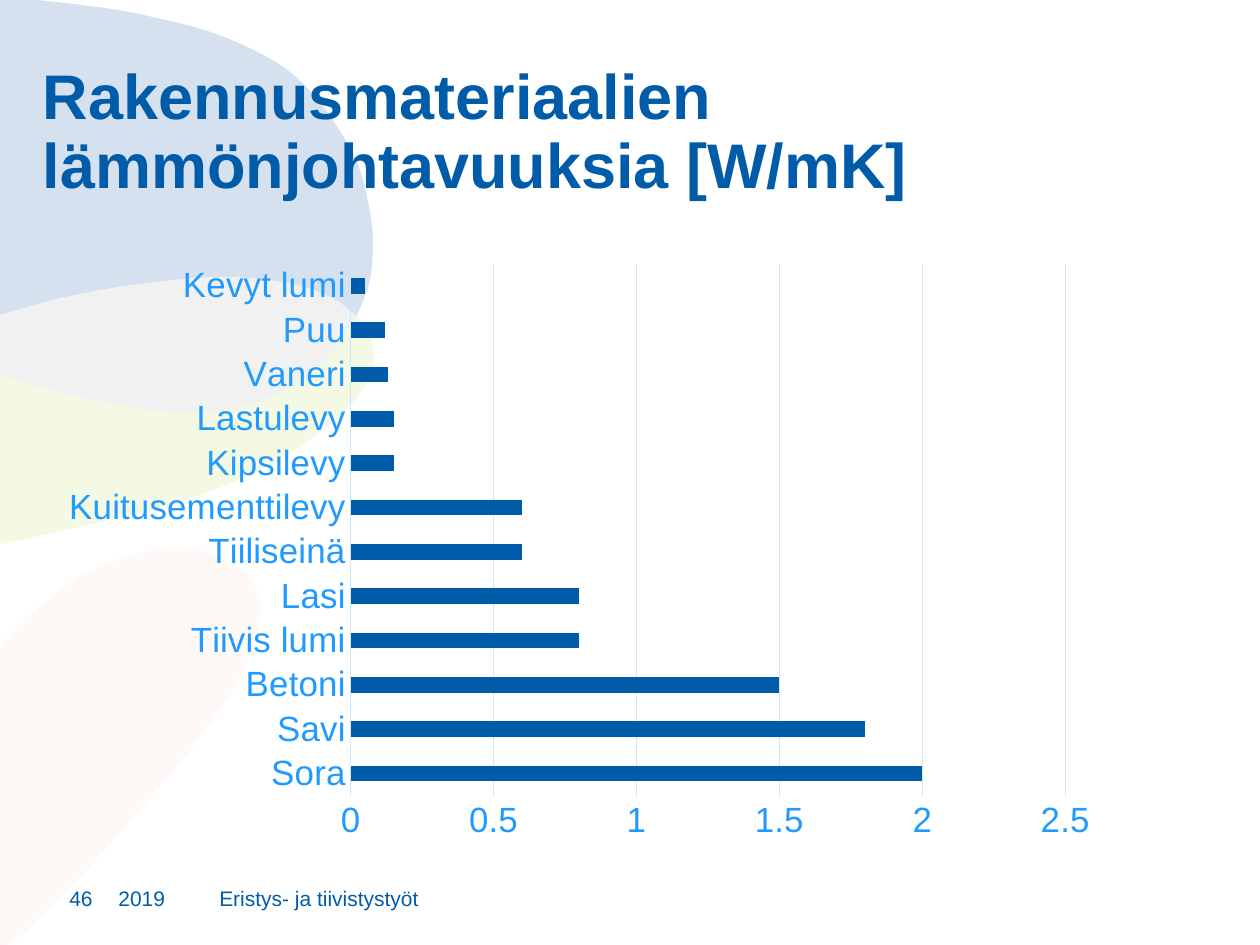
from lxml import etree
from pptx import Presentation
from pptx import util as u
from pptx.chart.data import CategoryChartData
from pptx.dml.color import RGBColor
from pptx.enum import chart as charts, text
from pptx.oxml import parse_xml
from pptx.oxml.ns import nsdecls

THEME = {
    "font": "Arial",
    "navy": RGBColor.from_string("005CA8"),
    "sky": RGBColor.from_string("219AFF"),
    "grid": RGBColor.from_string("CCE8FF"),
    "petal_blue": RGBColor.from_string("D6E1F0"),
    "petal_green": RGBColor.from_string("F3F9E3"),
    "petal_gray": RGBColor.from_string("F1F1F1"),
    "petal_rose": RGBColor.from_string("FEF9F7"),
    "title_size": u.Pt(36),
    "axis_size": u.Pt(20),
    "footer_size": u.Pt(12),
    "chart_size": u.Pt(10),
}


def format_font(font, color, **values):
    for key, value in {"name": THEME["font"], **values}.items():
        setattr(font, key, value)
    font.color.rgb = THEME[color]


def smooth_curve(points, steps=5):
    """Pass a Catmull-Rom curve through the points."""
    padded = [points[0], *points, points[-1]]
    curve = []
    for a, b, c, d in zip(padded, padded[1:], padded[2:], padded[3:]):
        for step in range(steps):
            t = step / steps
            curve.append(tuple(
                q + t * (r - p) / 2 + t**2 * (2 * p - 5 * q + 4 * r - s) / 2
                + t**3 * (3 * q - p - 3 * r + s) / 2
                for p, q, r, s in zip(a, b, c, d)))
    return curve + [points[-1]]


presentation = Presentation()
presentation.slide_width, presentation.slide_height = u.Inches(10), u.Inches(7.5)
slide = presentation.slides.add_slide(presentation.slide_layouts[5])

# Background petals: the gray one lies between the blue and the green
crest = smooth_curve([(0, 2.5), (0.47, 2.37), (0.94, 2.28), (1.41, 2.22), (1.78, 2.2),
                      (2.11, 2.22), (2.42, 2.28), (2.66, 2.38), (2.83, 2.51)])
belly = smooth_curve([(2.83, 2.51), (2.7, 2.72), (2.51, 2.92), (2.24, 3.11), (1.93, 3.23),
                      (1.56, 3.28), (1.16, 3.25), (0.64, 3.15), (0, 2.98)])
blue_edge = smooth_curve([(2.83, 2.51), (2.93, 2.25), (2.96, 1.95), (2.94, 1.7),
                          (2.85, 1.33), (2.71, 1.06), (2.53, 0.8), (2.3, 0.57),
                          (2.04, 0.41), (1.69, 0.26), (1.32, 0.16), (0.88, 0.07), (0.3, 0)])
green_edge = smooth_curve([(2.83, 2.51), (2.93, 2.64), (2.97, 2.83), (2.91, 3.03),
                           (2.77, 3.23), (2.55, 3.42), (2.23, 3.64), (1.84, 3.83),
                           (1.44, 3.98), (0.91, 4.12), (0, 4.32)])
rose_edge = smooth_curve([(0, 5.12), (0.27, 4.85), (0.54, 4.64), (0.81, 4.49), (1.11, 4.39),
                          (1.39, 4.35), (1.63, 4.38), (1.85, 4.47), (2, 4.61), (2.07, 4.81),
                          (2.03, 5.07), (1.92, 5.35), (1.75, 5.62), (1.48, 5.99),
                          (1.2, 6.32), (0.89, 6.68), (0.58, 7.02), (0.27, 7.33), (0.06, 7.5)])
petals = [
    ("petal_rose", rose_edge + [(0, 7.5)]),
    ("petal_green", green_edge + belly[::-1]),
    ("petal_blue", crest + blue_edge + [(0, 0)]),
    ("petal_gray", crest + belly),
]
for color, outline in petals:
    points = [(u.Inches(x), u.Inches(y)) for x, y in outline]
    builder = slide.shapes.build_freeform(*points[0])
    builder.add_line_segments(points[1:], close=True)
    shape = builder.convert_to_shape()
    shape.shadow.inherit = False
    shape.fill.solid()
    shape.fill.fore_color.rgb = THEME[color]
    shape.line.fill.background()

# Text frames shared settings
frame_format = {"margin_left": 0, "margin_right": 0, "margin_top": 0, "margin_bottom": 0,
                "word_wrap": True, "auto_size": text.MSO_AUTO_SIZE.NONE}

# Footer
for left, width, words in [(0.94, 0.7, "2019"), (1.74, 4.02, "Eristys- ja tiivistystyöt"),
                           (0.55, 0.39, "46")]:
    frame = slide.shapes.add_textbox(
        u.Inches(left), u.Inches(7.07), u.Inches(width), u.Inches(0.16)).text_frame
    for key, value in {**frame_format, "vertical_anchor": text.MSO_ANCHOR.BOTTOM}.items():
        setattr(frame, key, value)
    paragraph = frame.paragraphs[0]
    paragraph.text = words
    format_font(paragraph.runs[0].font, "navy", size=THEME["footer_size"])

# Conductivity chart
conductivities = {
    "Sora": 2, "Savi": 1.8, "Betoni": 1.5, "Tiivis lumi": 0.8, "Lasi": 0.8,
    "Tiiliseinä": 0.6, "Kuitusementtilevy": 0.6, "Kipsilevy": 0.15,
    "Lastulevy": 0.15, "Vaneri": 0.13, "Puu": 0.12, "Kevyt lumi": 0.05,
}
data = CategoryChartData()
data.categories = list(conductivities)
data.add_series("Series 1", list(conductivities.values()))
chart = slide.shapes.add_chart(
    charts.XL_CHART_TYPE.BAR_CLUSTERED, u.Inches(0.4), u.Inches(1.46),
    u.Inches(8.25), u.Inches(5.28), data).chart
chart.has_legend = False
chart.has_title = False
format_font(chart.font, "navy", size=THEME["chart_size"])

plot = chart.plots[0]
plot.gap_width = 182
plot.vary_by_categories = False
bars = plot.series[0].format.fill
bars.solid()
bars.fore_color.rgb = THEME["navy"]

for axis in (chart.category_axis, chart.value_axis):
    axis.major_tick_mark = axis.minor_tick_mark = charts.XL_TICK_MARK.NONE
    format_font(axis.tick_labels.font, "sky", size=THEME["axis_size"])
value_axis = chart.value_axis
for key, value in {"minimum_scale": 0, "maximum_scale": 2.5, "major_unit": 0.5,
                   "has_major_gridlines": True}.items():
    setattr(value_axis, key, value)
value_axis.tick_labels.number_format = "General"
value_axis.tick_labels.number_format_is_linked = False
value_axis.format.line.fill.background()
for line in (chart.category_axis.format.line, value_axis.major_gridlines.format.line):
    line.color.rgb = THEME["grid"]
    line.width = u.Pt(0.75)

# Fixed inner plot area
layout = parse_xml(f"<c:layout {nsdecls('c')}><c:manualLayout/></c:layout>")
for tag, value in [("layoutTarget", "inner"), ("xMode", "edge"), ("yMode", "edge"),
                   ("x", 0.29), ("y", 0.12), ("w", 0.69), ("h", 0.8)]:
    etree.SubElement(layout[0], f"{{{layout.nsmap['c']}}}{tag}", val=str(value))
plot_area = chart.element.chart.plotArea
for old_layout in plot_area.findall(layout.tag):
    plot_area.remove(old_layout)
plot_area.insert(0, layout)

# Title, in front of the petals
title = slide.shapes.title
title.element.getparent().append(title.element)
for key, value in {"left": 0.34, "top": 0.52, "width": 9.35, "height": 0.64}.items():
    setattr(title, key, u.Inches(value))
for key, value in {**frame_format, "vertical_anchor": text.MSO_ANCHOR.TOP}.items():
    setattr(title.text_frame, key, value)
paragraph = title.text_frame.paragraphs[0]
paragraph.text = "Rakennusmateriaalien lämmönjohtavuuksia [W/mK]"
paragraph.alignment = text.PP_ALIGN.LEFT
paragraph.line_spacing = 0.9
format_font(paragraph.runs[0].font, "navy", size=THEME["title_size"], bold=True)

presentation.save("out.pptx")
